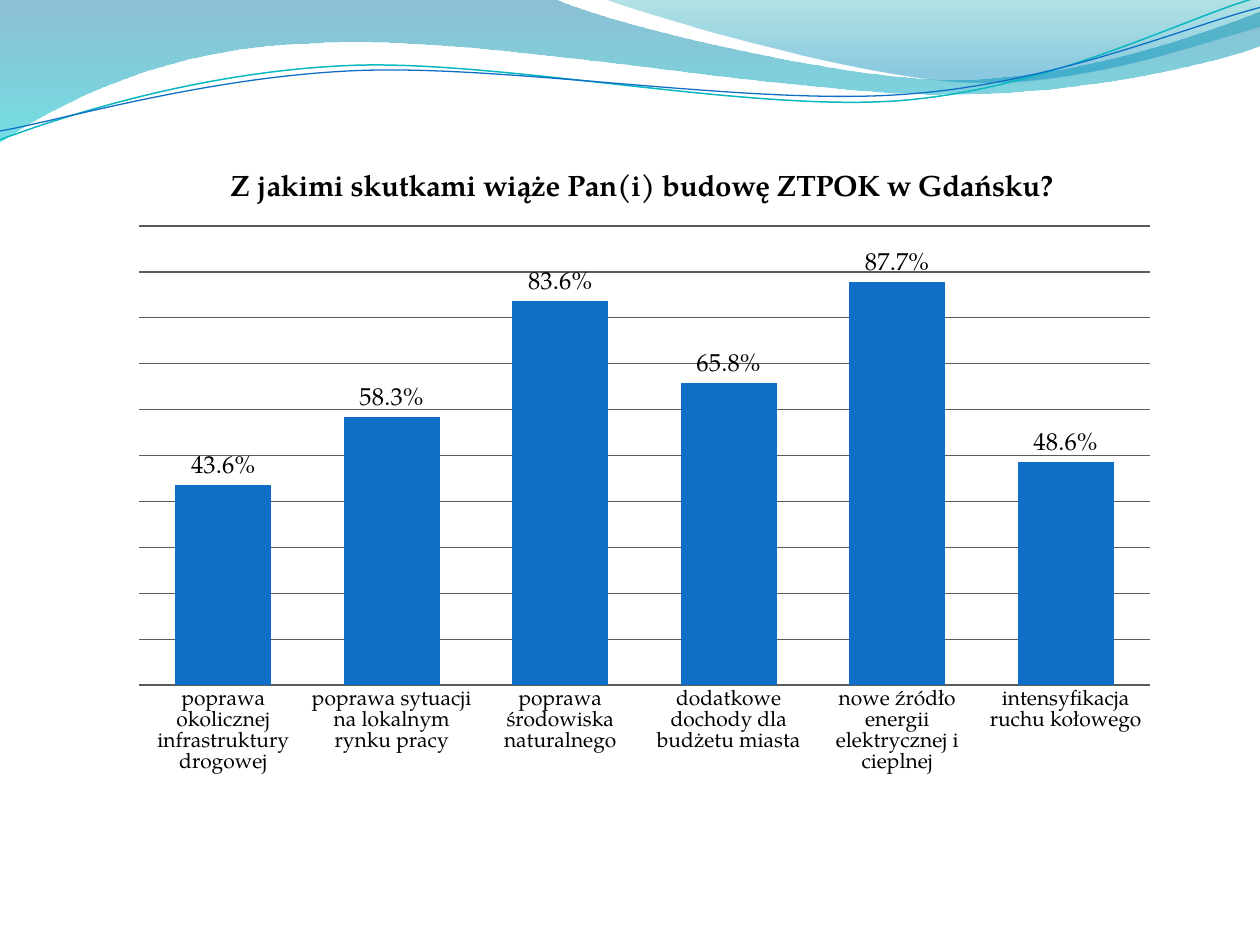
"""Build the survey slide: a wave header above a column chart of expected effects."""
from dataclasses import dataclass
from typing import Optional

from lxml import etree
from pptx import Presentation
from pptx import oxml as ox
from pptx.chart.data import CategoryChartData
from pptx.dml.color import RGBColor
from pptx.enum import chart as ch
from pptx.oxml import ns
from pptx.util import Pt

BLUE = RGBColor(0x0F, 0x6F, 0xC6)
TEAL = RGBColor(0x0A, 0xB8, 0xBF)
DEEP_BLUE = RGBColor(0x00, 0x74, 0xA1)
AQUA = RGBColor(0x00, 0xC6, 0xCF)
SEA_GREEN = RGBColor(0x00, 0xA1, 0xA9)
SKY = RGBColor(0x00, 0x8B, 0xBF)
GRID = RGBColor(0x5A, 0x5A, 0x5A)
BLACK = RGBColor(0, 0, 0)
FONT = "TeX Gyre Pagella"
PERCENT = "0.0%"
CHART_WIDTH, CHART_HEIGHT = 601.9, 365.8

TITLE = "Z jakimi skutkami wiąże Pan(i) budowę ZTPOK w Gdańsku? "
EFFECTS = {
    "poprawa okolicznej infrastruktury drogowej": 0.436,
    "poprawa sytuacji na lokalnym rynku pracy": 0.583,
    "poprawa środowiska naturalnego": 0.836,
    "dodatkowe dochody dla budżetu miasta": 0.658,
    "nowe źródło energii elektrycznej i cieplnej": 0.877,
    "intensyfikacja ruchu kołowego": 0.486,
}


@dataclass(frozen=True)
class Stop:
    position: float
    color: RGBColor
    opacity: int


@dataclass(frozen=True)
class Wave:
    """Start point, then segments of two numbers (line) or six (Bézier curve)."""
    start: tuple
    segments: tuple
    stops: tuple = ()
    line: Optional[RGBColor] = None
    width: float = 0
    rotation: float = 0


WAVES = (
    Wave((0, 0), (
        (316.8, -0.7),
        (342.7, 12.2, 478.1, 45.4, 545.8, 45.4),
        (614.2, 45.4, 689.8, 18.7, 720, 6.5),
        (720.7, 25.9),
        (707.8, 31.7, 626.4, 54.7, 537.1, 54),
        (447.8, 54, 275, 20.2, 185, 24.5),
        (92.9, 25.9, 33.1, 59.8, -0.7, 81.4),
    ), stops=(Stop(0, DEEP_BLUE, 45), Stop(1, AQUA, 55))),
    Wave((344.9, -0.7), (
        (366.5, 7.9, 491, 44.6, 553.7, 46.8),
        (616.3, 49.7, 691.9, 23, 720, 15.1),
        (720, 0),
    ), stops=(Stop(0, SEA_GREEN, 30), Stop(0.8, SKY, 45))),
    Wave((-1.4, 62.9), (
        (33.7, 51.6, 114, 29.4, 199.8, 29.9),
        (284.8, 30.3, 425.8, 67.2, 512.4, 64.8),
        (599, 62.4, 676.4, 25.7, 720.2, 15.5),
    ), line=TEAL, width=0.85, rotation=357.3),
    Wave((-1.2, 57.9), (
        (33, 53.7, 118.3, 32.5, 204, 33),
        (290.5, 33.5, 428.9, 63.8, 515.5, 61.3),
        (601.4, 59.6, 678.5, 30.1, 721.4, 21.3),
    ), line=BLUE, width=0.75, rotation=357.3),
)


def curve_segments(sp, segments: tuple) -> None:
    """Merge the three straight steps of every six-number segment into one curve."""
    steps = iter(sp.element.findall(".//" + ns.qn("a:lnTo")))
    for segment in segments:
        first = next(steps)
        if len(segment) == 6:
            first.tag = ns.qn("a:cubicBezTo")
            for step in (next(steps), next(steps)):
                first.append(step[0])
                step.getparent().remove(step)


def add_wave(s, wave: Wave) -> None:
    """Draw one header wave as a gradient area or an open line."""
    builder = s.shapes.build_freeform(Pt(wave.start[0]), Pt(wave.start[1]))
    points = [(Pt(x), Pt(y)) for seg in wave.segments for x, y in zip(seg[::2], seg[1::2])]
    builder.add_line_segments(points, close=bool(wave.stops))
    sp = builder.convert_to_shape()
    curve_segments(sp, wave.segments)
    sp.shadow.inherit = False
    sp.rotation = wave.rotation
    if wave.line is not None:
        sp.fill.background()
        sp.line.color.rgb = wave.line
        sp.line.width = Pt(wave.width)
        return
    sp.line.fill.background()
    sp.fill.gradient()
    sp.fill.gradient_angle = 270
    for target, stop in zip(sp.fill.gradient_stops, wave.stops):
        target.position = stop.position
        target.color.rgb = stop.color
    for color, stop in zip(sp.element.spPr.findall(".//" + ns.qn("a:srgbClr")), wave.stops):
        etree.SubElement(color, ns.qn("a:alpha")).set("val", str(stop.opacity * 1000))


def set_font(font, size: float, bold: bool = False) -> None:
    """Apply the slide's typeface in black."""
    font.name, font.size, font.bold = FONT, Pt(size), bold
    font.color.rgb = BLACK


def set_plot_area(chart, x: float, y: float, w: float, h: float) -> None:
    """Fix the inner plot area, in points within the chart."""
    area = chart.element.find(".//" + ns.qn("c:plotArea"))
    for old in area.findall(ns.qn("c:layout")):
        area.remove(old)
    values = {"layoutTarget": "inner", "xMode": "edge", "yMode": "edge",
              "x": x / CHART_WIDTH, "y": y / CHART_HEIGHT,
              "w": w / CHART_WIDTH, "h": h / CHART_HEIGHT}
    items = "".join(f'<c:{tag} val="{value}"/>' for tag, value in values.items())
    area.insert(0, ox.parse_xml(
        f'<c:layout {ns.nsdecls("c")}><c:manualLayout>{items}</c:manualLayout></c:layout>'))


def add_effects_chart(s) -> None:
    """Add the column chart of survey answers."""
    data = CategoryChartData(number_format=PERCENT)
    data.categories = list(EFFECTS)
    data.add_series("Series 1", list(EFFECTS.values()))
    chart = s.shapes.add_chart(ch.XL_CHART_TYPE.COLUMN_CLUSTERED, Pt(67.7), Pt(84.2),
                               Pt(CHART_WIDTH), Pt(CHART_HEIGHT), data).chart
    set_font(chart.font, 14)
    chart.has_legend = False
    chart.has_title = True
    p = chart.chart_title.text_frame.paragraphs[0]
    p.text = TITLE
    set_font(p.font, 16.8, bold=True)
    chart.chart_title.include_in_layout = False
    set_plot_area(chart, 11.8, 45, 577.7, 262.4)

    plot = chart.plots[0]
    plot.gap_width, plot.overlap, plot.vary_by_categories = 75, -25, False
    fill = plot.series[0].format.fill
    fill.solid()
    fill.fore_color.rgb = BLUE
    plot.has_data_labels = True
    labels = plot.data_labels
    labels.show_value = True
    labels.number_format, labels.number_format_is_linked = PERCENT, False
    labels.position = ch.XL_LABEL_POSITION.OUTSIDE_END
    set_font(labels.font, 14)

    cat, val = chart.category_axis, chart.value_axis
    cat.major_tick_mark = cat.minor_tick_mark = ch.XL_TICK_MARK.NONE
    set_font(cat.tick_labels.font, 12)
    val.minimum_scale, val.maximum_scale, val.major_unit = 0, 1, 0.1
    val.has_major_gridlines = True
    val.tick_labels.number_format = PERCENT
    val.tick_labels.number_format_is_linked = False
    val.visible = False
    for line in (cat.format.line, val.major_gridlines.format.line):
        line.color.rgb = GRID
        line.width = Pt(0.75)


def main() -> None:
    """Create and save the presentation."""
    prs = Presentation()
    prs.slide_width, prs.slide_height = Pt(720), Pt(540)
    s = prs.slides.add_slide(prs.slide_layouts[6])
    for wave in WAVES:
        add_wave(s, wave)
    add_effects_chart(s)
    prs.save("out.pptx")


if __name__ == "__main__":
    main()
